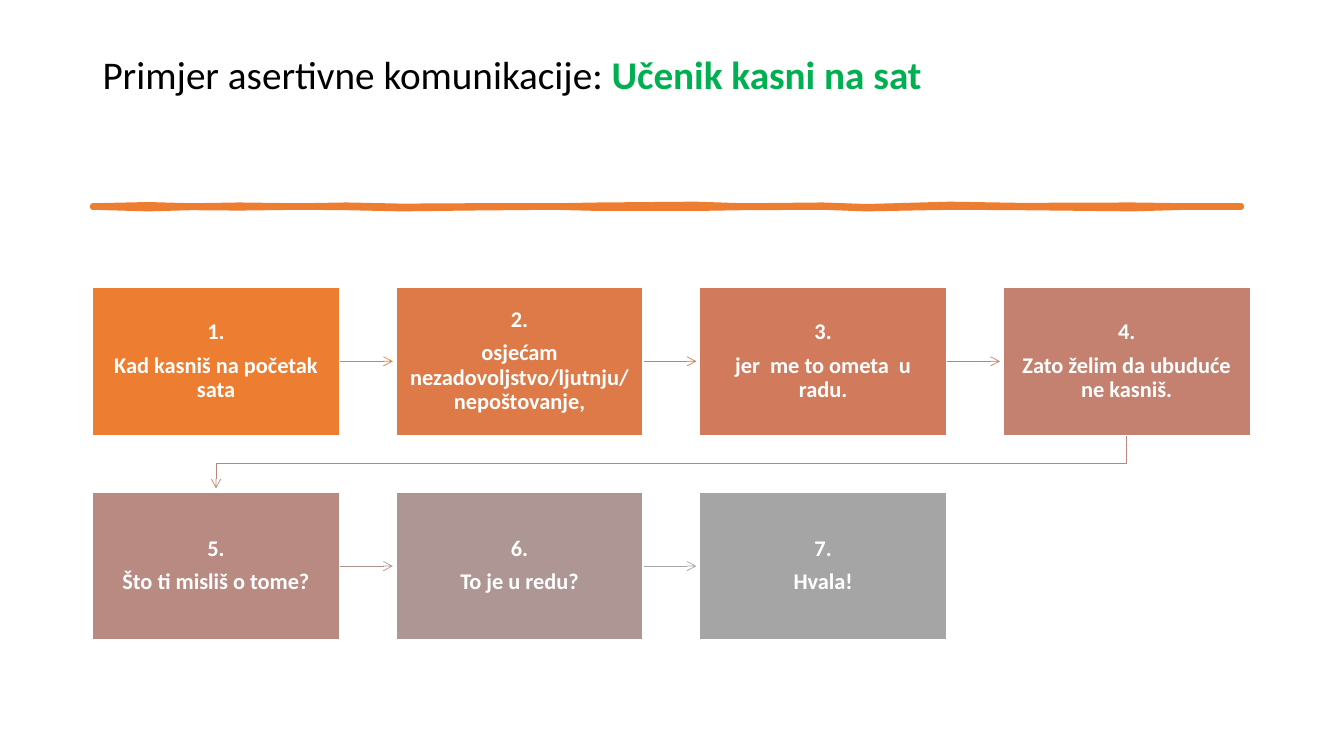
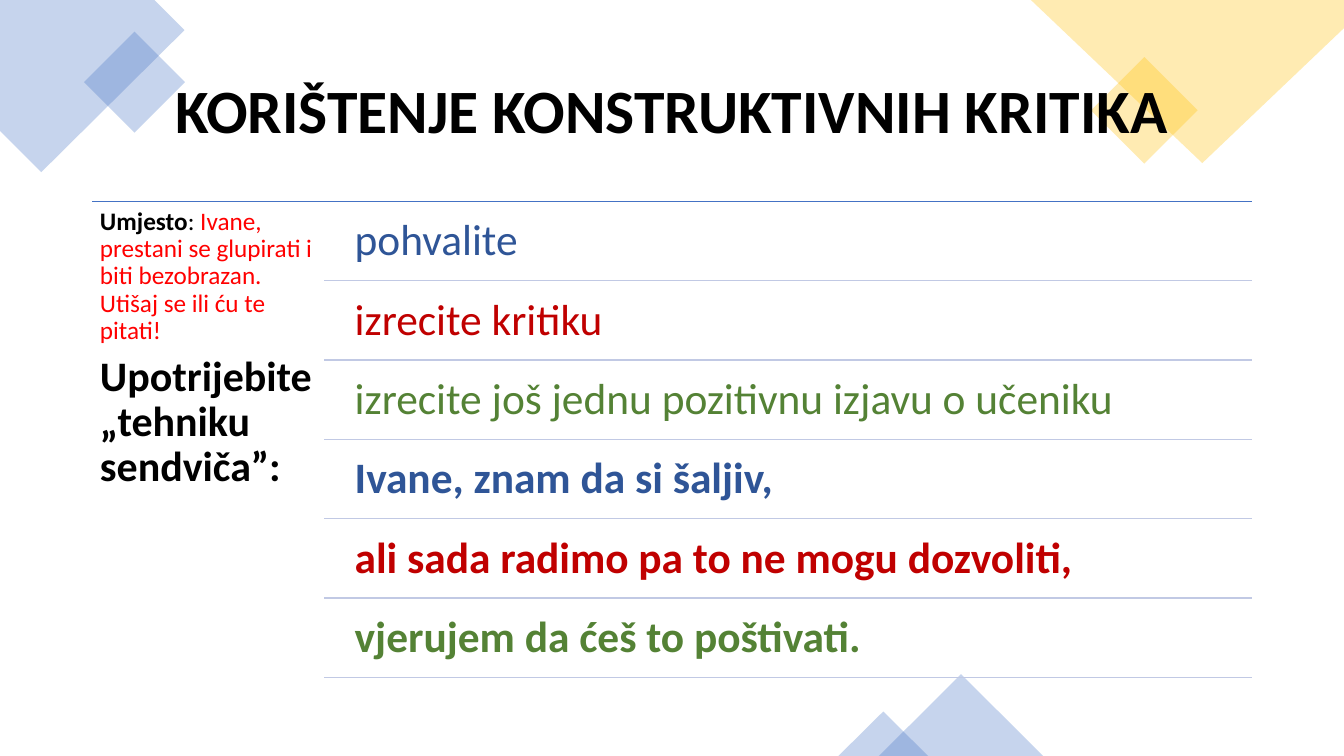
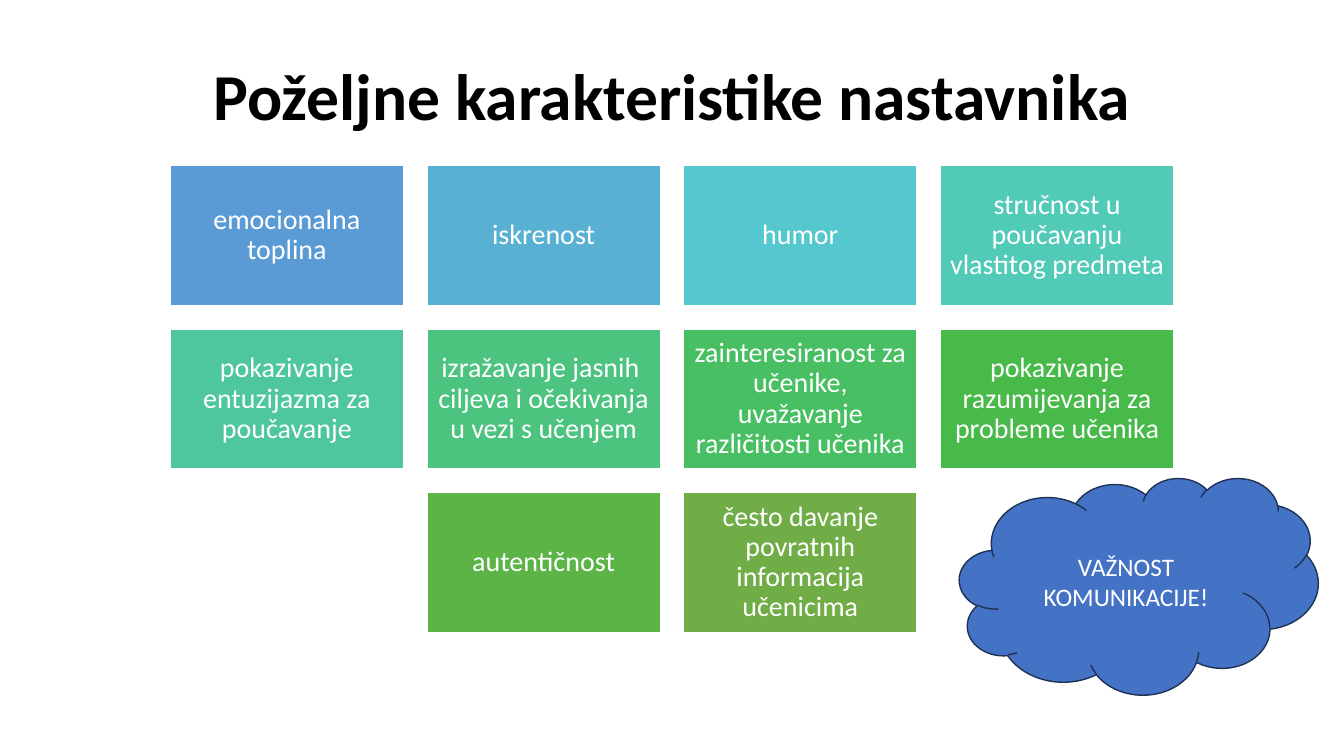
from lxml.etree import SubElement
from pptx import Presentation
from pptx.dml.color import RGBColor
from pptx.enum.shapes import MSO_CONNECTOR, MSO_SHAPE
from pptx.enum.text import MSO_ANCHOR, MSO_AUTO_SIZE, PP_ALIGN
from pptx.oxml.ns import qn
from pptx.util import Cm, Pt

FONT = "Calibri"
TITLE_ONLY = 5
COLORS = {
    "black": "000000",
    "white": "FFFFFF",
    "orange": "ED7D31",
    "blue": "4472C4",
    "gold": "FFC000",
    "navy": "1E3256",
    "red": "FF0000",
    "bright green": "00B050",
    "praise": "2F5597",
    "criticism": "C00000",
    "support": "548235",
    "divider": "C1C9E4",
}

# Card fill, colour of the arrow to the next card, text
STEPS = [
    ("ED7D31", "ED7D31", "Kad kasniš na početak sata"),
    ("DE7A47", "DC7A4B", "osjećam nezadovoljstvo/ljutnju/nepoštovanje,"),
    ("D17B5C", "CC7D64", "jer  me to ometa  u radu."),
    ("C48170", "BD867B", "Zato želim da ubuduće ne kasniš."),
    ("B98A82", "B09391", "Što ti misliš o tome?"),
    ("AE9694", "A5A5A5", "To je u redu?"),
    ("A5A5A5", None, "Hvala!"),
]

SANDWICH = [
    ("pohvalite", "praise", False),
    ("izrecite kritiku", "criticism", False),
    ("izrecite još jednu pozitivnu izjavu o učeniku", "support", False),
    ("Ivane, znam da si šaljiv,", "praise", True),
    ("ali sada radimo pa to ne mogu dozvoliti,", "criticism", True),
    ("vjerujem da ćeš to poštivati.", "support", True),
]

# Column, row, fill, text
TRAITS = [
    (0, 0, "5B9BD5", "emocionalna toplina"),
    (1, 0, "58B1D2", "iskrenost"),
    (2, 0, "55C7CE", "humor"),
    (3, 0, "52CAB8", "stručnost u poučavanju vlastitog predmeta"),
    (0, 1, "4FC79C", "pokazivanje entuzijazma za poučavanje"),
    (1, 1, "4CC37F", "izražavanje jasnih  ciljeva i očekivanja u vezi s učenjem"),
    (2, 1, "49BF64", "zainteresiranost za učenike, uvažavanje različitosti učenika"),
    (3, 1, "47BA49", "pokazivanje razumijevanja za probleme učenika"),
    (1, 2, "5CB447", "autentičnost"),
    (2, 2, "70AD47", "često davanje povratnih informacija učenicima"),
]

# Brush stroke: distance along it, rise of the upper edge, drop of the lower edge
STROKE = [
    (0, 0, 0), (1.4, 0.03, 0.04), (2.5, 0, 0.01), (3.7, 0.02, 0.02),
    (5.2, 0, 0), (6.4, 0.02, 0.01), (7.8, -0.01, 0.04), (9.4, 0, 0.02),
    (11.6, 0, 0), (12.8, 0.02, 0.03), (15.2, 0.04, 0.03), (16.4, 0, 0.01),
    (18.4, 0.02, 0), (19.5, -0.02, 0.04), (21.6, 0.04, 0), (23.4, 0.01, 0.01),
    (26.2, 0.02, 0.04), (27.6, 0, 0), (28.96, 0, 0),
]


def rgb(color):
    """Accept a key of COLORS or a hex string."""
    return RGBColor.from_string(COLORS.get(color, color))


def box(left, top, width, height):
    return Cm(left), Cm(top), Cm(width), Cm(height)


def add_runs(paragraph, runs, size):
    """Add runs given as (text, colour, bold)."""
    for text, color, bold in runs:
        run = paragraph.add_run()
        run.text = text
        run.font.name = FONT
        run.font.size = Pt(size)
        run.font.bold = bold
        run.font.color.rgb = rgb(color)


def fill_text(shape, paragraphs, inset, align, anchor):
    """Write paragraphs given as (size, runs) into a shape."""
    frame = shape.text_frame
    frame.word_wrap = True
    frame.vertical_anchor = anchor
    frame.margin_left = frame.margin_right = Cm(inset)
    frame.margin_top = frame.margin_bottom = Cm(inset)
    for index, (size, runs) in enumerate(paragraphs):
        paragraph = frame.add_paragraph() if index else frame.paragraphs[0]
        paragraph.alignment = align
        paragraph.line_spacing = 0.9
        paragraph.space_after = Pt(0.4 * size)
        add_runs(paragraph, runs, size)


def add_title(slide, place, runs, size, align=PP_ALIGN.CENTER, anchor=MSO_ANCHOR.MIDDLE):
    """Format the title placeholder and bring it to the front."""
    title = slide.shapes.title
    title.left, title.top, title.width, title.height = box(*place)
    frame = title.text_frame
    frame.auto_size = MSO_AUTO_SIZE.NONE
    frame.word_wrap = True
    frame.vertical_anchor = anchor
    paragraph = frame.paragraphs[0]
    paragraph.alignment = align
    paragraph.line_spacing = 0.9
    add_runs(paragraph, runs, size)
    title.element.getparent().append(title.element)
    return title


def style_shape(shape, fill=None, line=None, width=1, alpha=None):
    shape.shadow.inherit = False
    if fill:
        shape.fill.solid()
        shape.fill.fore_color.rgb = rgb(fill)
        if alpha:
            color = shape.element.spPr.find(qn("a:solidFill"))[0]
            SubElement(color, qn("a:alpha"), val=str(alpha * 1000))
    else:
        shape.fill.background()
    if line:
        shape.line.color.rgb = rgb(line)
        shape.line.width = Pt(width)
    else:
        shape.line.fill.background()
    return shape


def add_shape(slide, kind, place, **style):
    return style_shape(slide.shapes.add_shape(kind, *box(*place)), **style)


def add_outline(slide, points, close=True, **style):
    points = [(Cm(x), Cm(y)) for x, y in points]
    builder = slide.shapes.build_freeform(*points[0])
    builder.add_line_segments(points[1:], close=close)
    return style_shape(builder.convert_to_shape(), **style)


def add_line(slide, start, end, color, width=1):
    line = slide.shapes.add_connector(
        MSO_CONNECTOR.STRAIGHT, *(Cm(value) for value in (*start, *end)))
    line.line.color.rgb = rgb(color)
    line.line.width = Pt(width)
    SubElement(line.element.spPr, qn("a:effectLst"))
    return line


def add_arrowhead(shape):
    SubElement(shape.element.spPr.find(qn("a:ln")), qn("a:tailEnd"), type="arrow")


def add_card(slide, place, fill, paragraphs, inset):
    card = add_shape(slide, MSO_SHAPE.RECTANGLE, place, fill=fill, line="white")
    fill_text(card, paragraphs, inset, PP_ALIGN.CENTER, MSO_ANCHOR.MIDDLE)


def add_text(slide, place, paragraphs, inset):
    text_box = slide.shapes.add_textbox(*box(*place))
    fill_text(text_box, paragraphs, inset, PP_ALIGN.LEFT, MSO_ANCHOR.TOP)


def new_slide(presentation):
    return presentation.slides.add_slide(presentation.slide_layouts[TITLE_ONLY])


def build_steps_slide(presentation):
    slide = new_slide(presentation)
    title = add_title(
        slide, (2.33, 1.01, 29.21, 3.68),
        [("Primjer asertivne komunikacije: ", "black", False),
         ("Učenik kasni na sat", "bright green", True)],
        28, PP_ALIGN.LEFT, MSO_ANCHOR.TOP)
    title.text_frame.margin_top = Cm(0.38)

    left, upper, lower = 2.33, 5.18, 5.23
    edge = [(left + x, upper - rise) for x, rise, _ in STROKE]
    edge += [(left + x, lower + drop) for x, _, drop in reversed(STROKE)]
    add_outline(slide, edge, fill="orange", line="orange", width=3.25)

    columns, top = 4, 7.24
    width, height, pitch_x, pitch_y, arrow = 6.23, 3.73, 7.65, 5.16, 1.34
    for index, (fill, arrow_color, text) in enumerate(STEPS):
        row, column = divmod(index, columns)
        x, y = left + column * pitch_x, top + row * pitch_y
        middle = y + height / 2
        if arrow_color and column < columns - 1:
            add_arrowhead(add_line(slide, (x + width, middle),
                                   (x + width + arrow, middle), arrow_color, 0.5))
        elif arrow_color:
            bottom, turn = y + height, y + (height + pitch_y) / 2
            first, last = left + width / 2, x + width / 2
            add_arrowhead(add_outline(
                slide,
                [(last, bottom), (last, turn), (first, turn), (first, bottom + arrow)],
                close=False, line=arrow_color, width=0.5))
        paragraphs = [(16, [(line, "white", True)]) for line in (f"{index + 1}.", text)]
        add_card(slide, (x, y, width, height), fill, paragraphs, 0.3)


def build_criticism_slide(presentation):
    slide = new_slide(presentation)
    add_outline(slide, [(0, 0), (3.89, 0), (4.65, 0.76), (1.04, 4.34), (0, 3.3)],
                fill="blue", alpha=30)
    add_outline(slide, [(33.87, 0), (25.98, 0), (30.3, 4.11), (33.87, 0.71)],
                fill="gold", alpha=30)
    for place, color in [((2.49, 1.17, 1.8, 1.8), "blue"),
                         ((27.89, 1.83, 1.9, 1.9), "gold")]:
        add_shape(slide, MSO_SHAPE.RECTANGLE, place, fill=color, alpha=30).rotation = 315
    for place in [(22.15, 16.99, 4.14, 2.06), (21.13, 17.93, 2.26, 1.12)]:
        add_shape(slide, MSO_SHAPE.ISOSCELES_TRIANGLE, place, fill="blue", alpha=30)
    add_title(slide, (2.33, 1.01, 29.21, 3.68),
              [("KORIŠTENJE KONSTRUKTIVNIH KRITIKA", "black", True)], 44)

    left, right, top, pitch = 2.33, 31.54, 5.07, 2
    add_line(slide, (left, top), (right, top), "blue")
    add_text(slide, (left, top, 5.84, 12.09), [
        (18, [("Umjesto", "black", True), (": ", "black", False),
              ("Ivane, prestani se glupirati i biti bezobrazan. "
               "Utišaj se ili ću te pitati!", "red", False)]),
        (30, [("Upotrijebite „tehniku sendviča”:", "black", True)]),
    ], 0.19)
    for index, run in enumerate(SANDWICH):
        y = top + index * pitch
        add_text(slide, (8.61, y + 0.1, 22.93, 1.9), [(31, [run])], 0.33)
        add_line(slide, (8.17, y + pitch), (right, y + pitch), "divider")


def build_traits_slide(presentation):
    slide = new_slide(presentation)
    add_title(slide, (2.33, 1.55, 29.21, 1.93),
              [("Poželjne karakteristike nastavnika", "black", True)], 46.8)
    left, top, width, height, gap = 4.29, 4.17, 5.88, 3.53, 0.59
    for column, row, fill, text in TRAITS:
        place = (left + column * (width + gap), top + row * (height + gap), width, height)
        add_card(slide, place, fill, [(20, [(text, "white", False)])], 0.21)

    cloud = add_shape(slide, MSO_SHAPE.CLOUD, (24.18, 12.04, 9.04, 5.46),
                      fill="blue", line="navy")
    cloud.text_frame.word_wrap = True
    cloud.text_frame.vertical_anchor = MSO_ANCHOR.MIDDLE
    paragraph = cloud.text_frame.paragraphs[0]
    paragraph.alignment = PP_ALIGN.CENTER
    add_runs(paragraph, [("VAŽNOST KOMUNIKACIJE!", "white", False)], 18)


def main():
    presentation = Presentation()
    presentation.slide_width = Cm(33.87)
    presentation.slide_height = Cm(19.05)
    build_steps_slide(presentation)
    build_criticism_slide(presentation)
    build_traits_slide(presentation)
    presentation.save("out.pptx")


if __name__ == "__main__":
    main()
